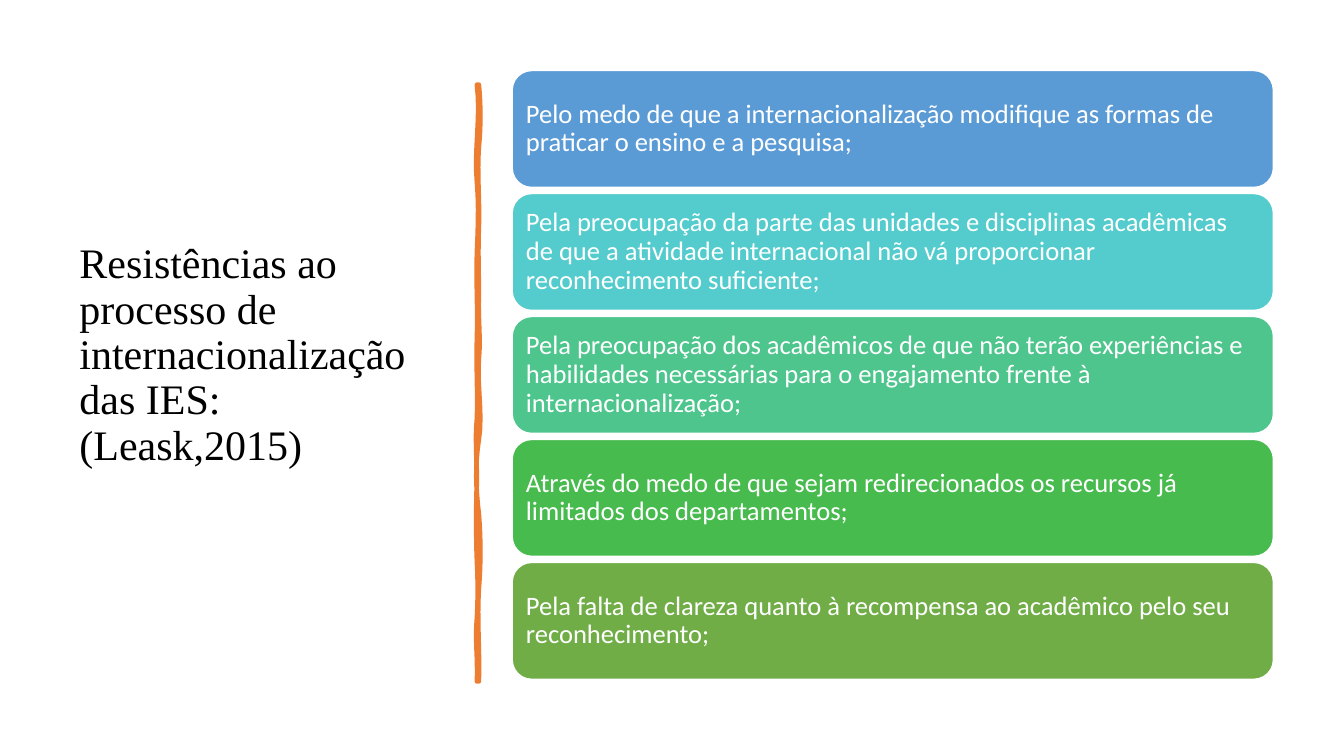
from lxml import etree
from pptx import Presentation
from pptx.dml.color import RGBColor
from pptx.enum import shapes, text
from pptx.oxml import ns
from pptx.util import Inches, Pt

HUES = {
    "ink": "000000", "white": "FFFFFF", "brush": "ED7D31",
    "blue": "5B9BD5", "aqua": "54CCCD", "mint": "4DC58D",
    "green": "48BB4F", "olive": "70AD47",
}

TITLE = "Resistências ao processo de internacionalização das IES:\v(Leask,2015)"

CARDS = [
    ("blue", "Pelo medo de que a internacionalização modifique as formas de "
             "praticar o ensino e a pesquisa;"),
    ("aqua", "Pela preocupação da parte das unidades e disciplinas acadêmicas "
             "de que a atividade internacional não vá proporcionar "
             "reconhecimento suficiente;"),
    ("mint", "Pela preocupação dos acadêmicos de que não terão experiências e "
             "habilidades necessárias para o engajamento frente à "
             "internacionalização;"),
    ("green", "Através do medo de que sejam redirecionados os recursos já "
              "limitados dos departamentos;"),
    ("olive", "Pela falta de clareza quanto à recompensa ao acadêmico pelo seu "
              "reconhecimento;"),
]

# Each bend of the brush line: two control x values and the y where it ends
RIGHT = [(4.77, 4.77, 1.46), (4.73, 4.76, 2.26), (4.74, 4.75, 2.94),
         (4.74, 4.77, 3.56), (4.73, 4.79, 4.36), (4.71, 4.72, 5.1),
         (4.77, 4.77, 5.84), (4.73, 4.76, 6.76)]
LEFT = [(4.74, 4.71, 6.13), (4.74, 4.74, 5.57), (4.72, 4.72, 4.77),
        (4.73, 4.71, 4.15), (4.74, 4.72, 3.35), (4.74, 4.72, 2.5),
        (4.74, 4.75, 1.81), (4.7, 4.77, 0.84)]


def trace(x, y, bends, steps=8):
    """Points along one wavy edge that keeps coming back to x."""
    dots = [(x, y)]
    for a, b, end in bends:
        for i in range(1, steps + 1):
            t = i / steps
            s = 1 - t
            across = x * (s**3 + t**3) + 3 * s * t * (a * s + b * t)
            dots.append((across, y + (end - y) * t))
        y = end
    return dots


class Deck:
    font = "Calibri"
    serif = "Times New Roman"

    def __init__(self):
        self.prs = Presentation()
        self.prs.slide_width = Inches(13.33)
        self.prs.slide_height = Inches(7.5)
        self.slide = self.prs.slides.add_slide(self.prs.slide_layouts[6])

    def hue(self, name):
        return RGBColor.from_string(HUES[name])

    def paint(self, shape, fill, line, width):
        shape.shadow.inherit = False
        shape.fill.solid()
        shape.fill.fore_color.rgb = self.hue(fill)
        shape.line.color.rgb = self.hue(line)
        shape.line.width = Pt(width)

    def label(self, shape, words, font, size, color):
        frame = shape.text_frame
        frame.word_wrap = True
        frame.vertical_anchor = text.MSO_ANCHOR.MIDDLE
        frame.text = words
        para = frame.paragraphs[0]
        para.alignment = text.PP_ALIGN.LEFT
        para.line_spacing = 0.9
        for run in para.runs:
            run.font.name = font
            run.font.size = Pt(size)
            run.font.color.rgb = self.hue(color)
        return frame

    def title(self, words, *box):
        shape = self.slide.shapes.add_textbox(*map(Inches, box))
        self.label(shape, words, self.serif, 30, "ink")

    def card(self, words, fill, *box):
        shape = self.slide.shapes.add_shape(
            shapes.MSO_SHAPE.ROUNDED_RECTANGLE, *map(Inches, box))
        self.paint(shape, fill, "white", 1)
        frame = self.label(shape, words, self.font, 19, "white")
        frame.margin_left = frame.margin_right = Inches(0.08)
        frame.margin_top = frame.margin_bottom = Inches(0.08)

    def brush(self, dots, color, width):
        dots = [(Inches(x), Inches(y)) for x, y in dots]
        build = self.slide.shapes.build_freeform(*dots[0])
        build.add_line_segments(dots[1:], close=True)
        shape = build.convert_to_shape()
        self.paint(shape, color, color, width)
        # Round joins
        line = shape.element.spPr.find(ns.qn("a:ln"))
        etree.SubElement(line, ns.qn("a:round"))


def main():
    deck = Deck()

    # Title on the left
    deck.title(TITLE, 0.69, 0.7, 3.74, 5.66)

    # Hand-drawn divider
    deck.brush(trace(4.75, 0.84, RIGHT) + trace(4.73, 6.76, LEFT),
               "brush", 3.25)

    # Stack of reasons
    top, pitch = 0.7, 1.22
    for i, (fill, words) in enumerate(CARDS):
        deck.card(words, fill, 5.08, top + i * pitch, 7.55, 1.16)

    deck.prs.save("out.pptx")


if __name__ == "__main__":
    main()
